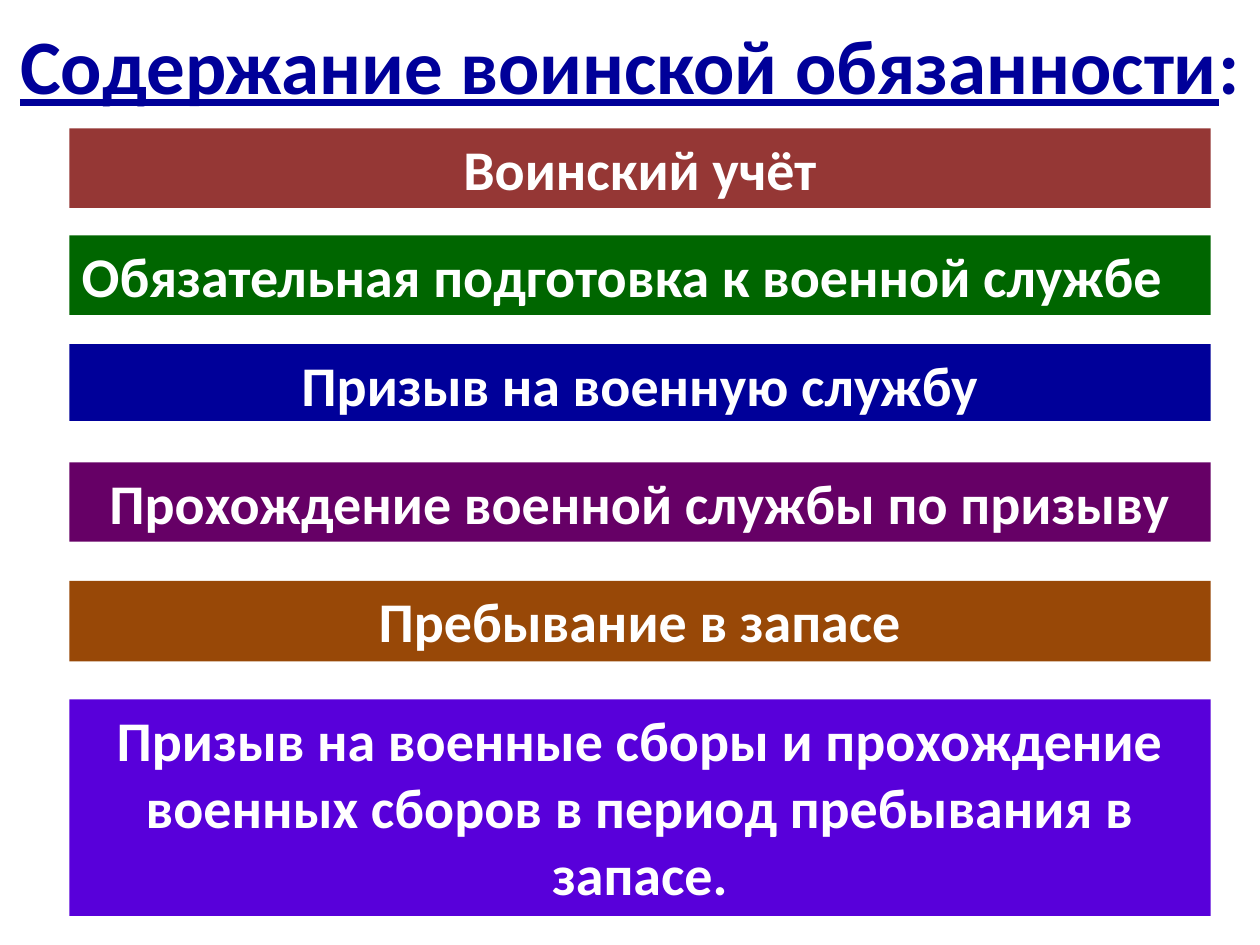
from dataclasses import dataclass

from pptx import Presentation
from pptx.dml.color import RGBColor
from pptx.enum.shapes import MSO_SHAPE
from pptx.enum.text import MSO_ANCHOR, PP_ALIGN
from pptx.util import Pt


@dataclass(frozen=True)
class Theme:
    """Hold the colours, type sizes and bar column of the slide."""
    font: str = "Calibri"
    title_size: int = 44
    bar_size: int = 32
    title: str = "000099"
    bar_text: str = "FFFFFF"
    bar_left: float = 39.6
    bar_width: float = 652.3


THEME = Theme()

BARS = [
    ("Воинский учёт", 73.4, 45.4, "953735", PP_ALIGN.CENTER, MSO_ANCHOR.BOTTOM),
    ("Обязательная подготовка к военной службе", 134.6, 45.4, "006600",
     PP_ALIGN.LEFT, MSO_ANCHOR.BOTTOM),
    ("Призыв на военную службу", 196.6, 43.9, "000099", PP_ALIGN.CENTER, MSO_ANCHOR.TOP),
    ("Прохождение военной службы по призыву", 264.2, 45.4, "660066",
     PP_ALIGN.CENTER, MSO_ANCHOR.TOP),
    ("Пребывание в запасе", 331.9, 46.1, "984807", PP_ALIGN.CENTER, MSO_ANCHOR.TOP),
    ("Призыв на военные сборы и прохождение военных сборов в период пребывания в запасе.",
     399.6, 123.8, "5800DA", PP_ALIGN.CENTER, MSO_ANCHOR.TOP),
]


def format_run(r, size, color, underline=False):
    """Apply the bold theme font to a run."""
    r.font.name = THEME.font
    r.font.size = Pt(size)
    r.font.bold = True
    r.font.underline = underline
    r.font.color.rgb = RGBColor.from_string(color)


def add_title(s, text, ending):
    """Fill the title placeholder with underlined text and a plain ending."""
    sp = s.shapes.title
    sp.left, sp.top, sp.width, sp.height = Pt(0), Pt(0), Pt(720), Pt(73.4)
    tf = sp.text_frame
    tf.vertical_anchor = MSO_ANCHOR.MIDDLE
    p = tf.paragraphs[0]
    p.alignment = PP_ALIGN.CENTER
    for part, underline in ((text, True), (ending, False)):
        r = p.add_run()
        r.text = part
        format_run(r, THEME.title_size, THEME.title, underline)


def add_bar(s, text, top, height, fill, align, anchor):
    """Add one coloured bar with its label."""
    sp = s.shapes.add_shape(MSO_SHAPE.RECTANGLE, Pt(THEME.bar_left), Pt(top),
                            Pt(THEME.bar_width), Pt(height))
    sp.shadow.inherit = False
    sp.fill.solid()
    sp.fill.fore_color.rgb = RGBColor.from_string(fill)
    sp.line.fill.background()
    tf = sp.text_frame
    tf.word_wrap = True
    tf.vertical_anchor = anchor
    tf.text = text
    p = tf.paragraphs[0]
    p.alignment = align
    format_run(p.runs[0], THEME.bar_size, THEME.bar_text)


def main():
    """Build and save the slide."""
    prs = Presentation()
    prs.slide_width, prs.slide_height = Pt(720), Pt(540)
    s = prs.slides.add_slide(prs.slide_layouts[5])
    add_title(s, "Содержание воинской обязанности", ":")
    for bar in BARS:
        add_bar(s, *bar)
    prs.save("out.pptx")


if __name__ == "__main__":
    main()
